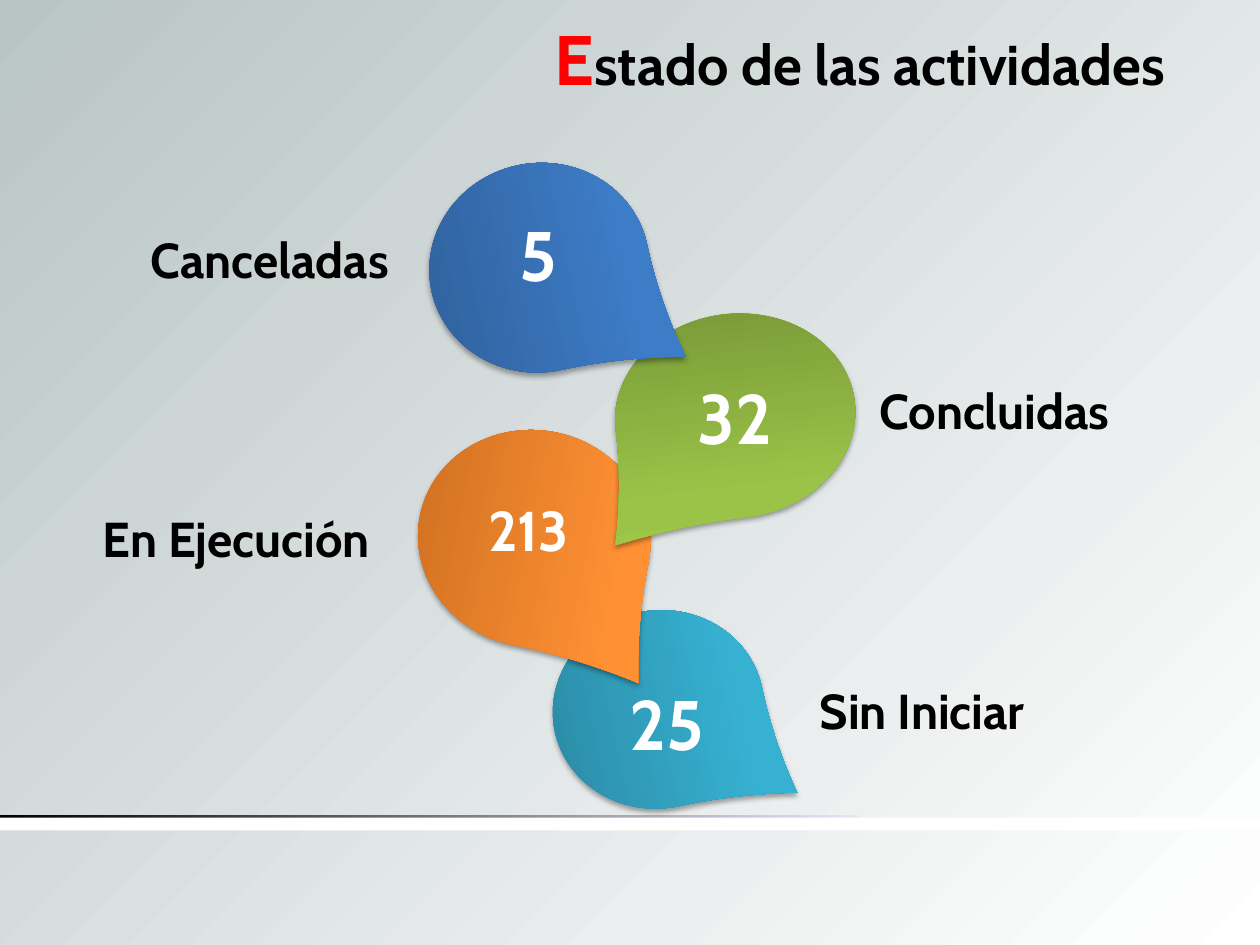
from dataclasses import dataclass

from pptx import Presentation
from pptx.dml.color import RGBColor
from pptx.enum.shapes import MSO_SHAPE
from pptx.enum.text import MSO_ANCHOR, MSO_AUTO_SIZE, PP_ALIGN
from pptx.oxml import parse_xml
from pptx.oxml.ns import nsdecls, qn
from pptx.util import Inches, Pt


@dataclass(frozen=True)
class Theme:
    font: str = "Cabin"
    black: str = "000000"
    white: str = "FFFFFF"
    red: str = "FF0000"
    back: tuple = ((0, "FFFFFF"), (100, "B9C4C5"))
    rule: tuple = ((0, "000000"), (100, "E1E8F5"))
    blue: tuple = ((0, "2F5F99"), (80, "3D7CC7"), (100, "3A7CCB"))
    green: tuple = ((0, "779737"), (80, "9BC348"), (100, "9DC746"))
    orange: tuple = ((0, "CC6E20"), (80, "FF9034"), (100, "FF9136"))
    teal: tuple = ((0, "2A88A2"), (80, "37B1D2"), (100, "34B4D6"))
    big: int = 40
    mid: int = 32
    label: int = 28


SHADOW = f"""<a:outerShdw {nsdecls('a')} blurRad="{Pt(3.1)}" dist="{Pt(1.8)}"
 dir="5400000" rotWithShape="0"><a:srgbClr val="000000"><a:alpha val="35000"/>
</a:srgbClr></a:outerShdw>"""
CORNER = '<a:path path="circle"><a:fillToRect l="100000" t="100000"/></a:path>'


class Board:
    def __init__(self, slide, theme):
        self.slide = slide
        self.theme = theme

    def blend(self, fill, root, stops, shade):
        """Give the fill any number of colour stops and a shading rule."""
        fill.gradient()
        marks = "".join(
            f'<a:gs pos="{pos * 1000}"><a:srgbClr val="{tint}"/></a:gs>'
            for pos, tint in stops)
        old = root.find(".//" + qn("a:gradFill"))
        old.getparent().replace(old, parse_xml(
            f'<a:gradFill {nsdecls("a")} rotWithShape="1">'
            f"<a:gsLst>{marks}</a:gsLst>{shade}</a:gradFill>"))

    def back(self, stops):
        self.blend(self.slide.background.fill, self.slide.element, stops, CORNER)

    def shape(self, kind, box, paint, angle=0):
        """Paint is one colour or a tuple of gradient stops."""
        item = self.slide.shapes.add_shape(kind, *map(Inches, box))
        item.shadow.inherit = False
        item.line.fill.background()
        if isinstance(paint, str):
            item.fill.solid()
            item.fill.fore_color.rgb = RGBColor.from_string(paint)
        else:
            self.blend(item.fill, item.element, paint,
                       f'<a:lin ang="{angle * 60000}" scaled="0"/>')
        return item

    def drop(self, box, turn, paint, point=1.118):
        item = self.shape(MSO_SHAPE.TEAR, box, paint, 270)
        item.adjustments[0] = point
        item.rotation = turn
        item.element.spPr.find(qn("a:effectLst")).append(parse_xml(SHADOW))

    def text(self, box, runs, align=PP_ALIGN.CENTER, anchor=MSO_ANCHOR.MIDDLE,
             wrap=True):
        """Each run is its words, size and colour."""
        frame = self.slide.shapes.add_textbox(*map(Inches, box)).text_frame
        frame.word_wrap = wrap
        frame.auto_size = MSO_AUTO_SIZE.SHAPE_TO_FIT_TEXT
        frame.vertical_anchor = anchor
        para = frame.paragraphs[0]
        para.alignment = align
        for words, size, tint in runs:
            run = para.add_run()
            run.text = words
            run.font.name = self.theme.font
            run.font.size = Pt(size)
            run.font.bold = True
            run.font.color.rgb = RGBColor.from_string(tint)

    def label(self, box, words, **style):
        self.text(box, [(words, self.theme.label, self.theme.black)], **style)

    def count(self, box, words, size):
        self.text(box, [(words, size, self.theme.white)])


def main():
    deck = Presentation()
    deck.slide_width, deck.slide_height = Inches(10), Inches(7.5)
    theme = Theme()
    board = Board(deck.slides.add_slide(deck.slide_layouts[6]), theme)

    board.back(theme.back)
    board.shape(MSO_SHAPE.RECTANGLE, (0, 6.47, 6.81, 0.05), theme.rule)
    board.shape(MSO_SHAPE.RECTANGLE, (0, 6.49, 10, 0.1), theme.white)

    board.text((4.03, 0.07, 5.59, 0.77), [
        ("E", theme.big, theme.red),
        ("stado de las actividades", theme.mid, theme.black)])

    board.label((6.88, 2.97, 2.17, 0.57), "Concluidas",
                align=PP_ALIGN.LEFT, anchor=MSO_ANCHOR.TOP, wrap=False)
    board.label((0.59, 3.99, 2.57, 0.57), "En Ejecución",
                anchor=MSO_ANCHOR.TOP, wrap=False)
    board.label((6.21, 5.35, 2.22, 0.57), "Sin Iniciar")
    board.label((1.03, 1.77, 2.22, 0.57), "Canceladas")

    board.drop((4.44, 4.79, 1.57, 1.68), 77.9, theme.teal)
    board.drop((3.38, 3.35, 1.72, 1.85), 101.3, theme.orange)
    board.drop((4.88, 2.49, 1.91, 1.62), 173.1, theme.green)
    board.drop((3.45, 1.25, 1.66, 1.75), 77.8, theme.blue, 1.128)

    board.count((3.88, 1.63, 0.79, 0.77), "5", theme.big)
    board.count((5.3, 2.92, 1.07, 0.77), "32", theme.big)
    board.count((3.64, 3.88, 1.11, 0.64), "213", theme.mid)
    board.count((4.75, 5.35, 1.09, 0.77), "25", theme.big)

    deck.save("out.pptx")


if __name__ == "__main__":
    main()
